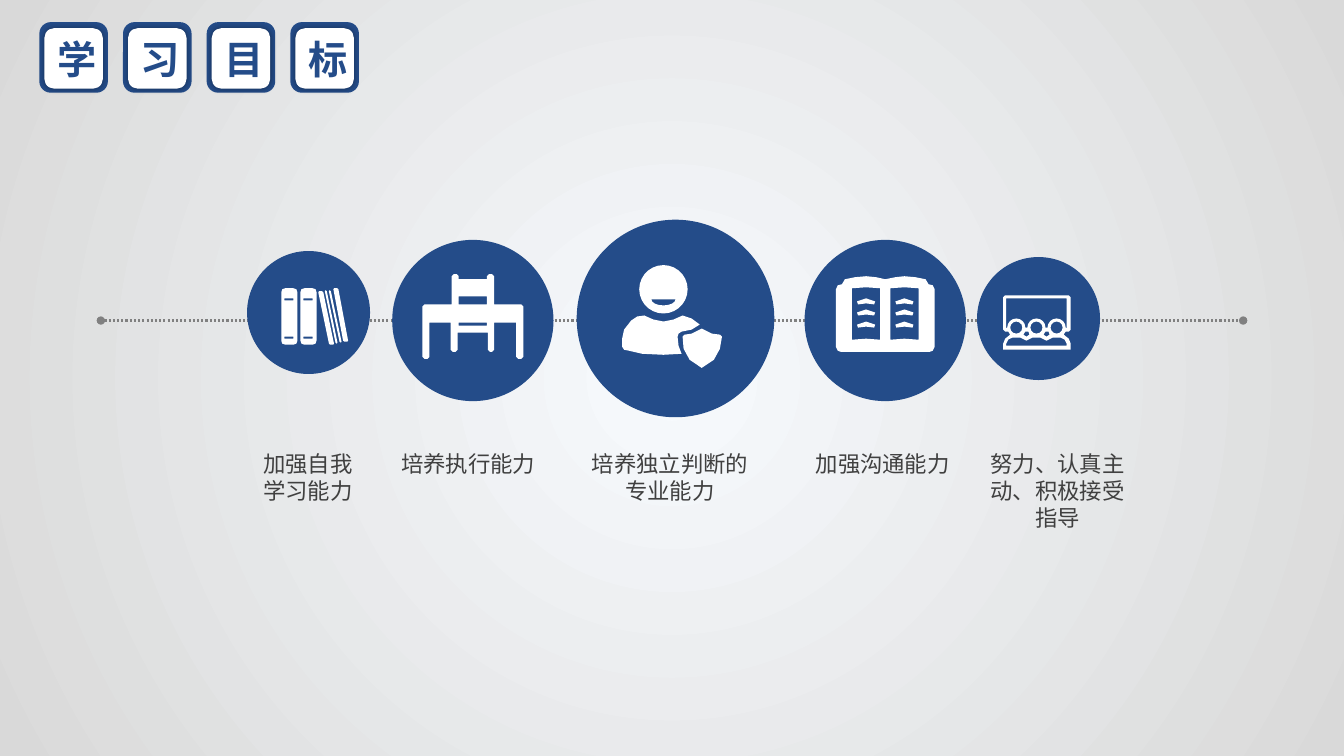
from math import cos, hypot, radians, sin

from lxml.etree import SubElement
from pptx import Presentation
from pptx.dml.color import RGBColor
from pptx.enum.dml import MSO_LINE
from pptx.enum.shapes import MSO_CONNECTOR, MSO_SHAPE
from pptx.enum.text import MSO_ANCHOR, MSO_AUTO_SIZE, PP_ALIGN
from pptx.oxml.ns import qn
from pptx.util import Pt

PX = 9144  # EMU, 100 px to the inch
FONT = "Arial"
COLORS = {
    "navy": "244C89",
    "white": "FFFFFF",
    "text": "404040",
    "line": "808080",
    "glow": "F7FAFD",
    "edge": "D9D9D9",
    "shadow": "000000",
}
TILE_LEFT, TILE_STEP = 39, 83


def color(name):
    return RGBColor.from_string(COLORS[name])


def box(left, top, width, height):
    return [(left, top), (left + width, top),
            (left + width, top + height), (left, top + height)]


def arc(center_x, center_y, radius_x, radius_y, start, end, steps):
    angles = [radians(start + (end - start) * i / steps) for i in range(steps + 1)]
    return [(center_x + radius_x * cos(a), center_y + radius_y * sin(a)) for a in angles]


def circle_outline(center_x, center_y, radius, steps):
    return arc(center_x, center_y, radius, radius, 0, 360, steps)[:-1]


def slanted(top_x, top_y, bottom_x, bottom_y, half):
    return [(top_x - half, top_y), (top_x + half, top_y),
            (bottom_x + half, bottom_y), (bottom_x - half, bottom_y)]


def move(points, dx, dy=0):
    return [(x + dx, y + dy) for x, y in points]


def soften(points, radius):
    """Round the convex corners of a clockwise outline."""
    outline = []
    for i, (x, y) in enumerate(points):
        before, after = points[i - 1], points[(i + 1) % len(points)]
        cross = (x - before[0]) * (after[1] - y) - (y - before[1]) * (after[0] - x)
        if cross <= 0:
            outline.append((x, y))
            continue
        ends = []
        for other_x, other_y in (before, after):
            length = hypot(other_x - x, other_y - y)
            share = min(radius / length, 0.5)
            ends.append((x + (other_x - x) * share, y + (other_y - y) * share))
        (x0, y0), (x1, y1) = ends
        middle = ((x0 + x1 + 2 * x) / 4, (y0 + y1 + 2 * y) / 4)
        outline += [ends[0], middle, ends[1]] if radius > 2 else ends
    return outline


def books_icon():
    contours = []
    for left in (279, 298):
        contours.append(soften(box(left, 286, 16, 56), 4))
        contours += [box(left + 3, top, 9, 2) for top in (296, 334)]
    for band in ((318, 289, 329, 342, 2.5), (323, 288, 334, 341, 1),
                 (327, 288, 338, 340, 1), (333, 286, 343, 339, 2.5)):
        contours.append(soften(slanted(*band), 1))
    return contours


def desk_icon():
    desk = [(419, 302), (448, 302), (448, 272), (455, 272), (455, 277), (483, 277),
            (483, 272), (490, 272), (490, 302), (519, 302), (519, 356), (512, 356),
            (512, 320), (490, 320), (490, 349), (484, 349), (484, 330), (454, 330),
            (454, 349), (447, 349), (447, 320), (426, 320), (426, 356), (419, 356)]
    return [soften(desk, 2), box(455, 294, 28, 8), box(455, 320, 28, 3)]


def guard_icon():
    body = [(639, 313), (648, 317), (658, 319), (668, 317), (677, 313), (686, 316),
            (694, 322), (686, 327), (676, 329), (673, 331), (672, 334), (673, 343),
            (676, 351), (658, 352), (637, 351), (624, 348), (619, 347), (617, 344),
            (617, 336), (619, 327), (626, 318), (632, 314)]
    shield = [(679, 332), (686, 331), (696, 326), (706, 331), (714, 332), (716, 334),
              (714, 346), (708, 357), (696, 365), (684, 357), (678, 346), (677, 334)]
    return [circle_outline(658, 287, 24, 28), arc(658, 297, 12, 6, 0, 180, 8),
            body, shield]


def open_book_icon():
    cover = [(831, 283), (835, 282), (838, 277), (848, 275), (859, 274), (869, 275),
             (878, 277), (888, 275), (897, 274), (908, 275), (918, 277), (921, 282),
             (925, 283), (927, 287), (927, 344), (925, 348), (922, 349),
             (834, 349), (831, 348), (829, 344), (829, 287)]
    page = [(845, 286), (859, 285), (873, 286), (873, 337), (859, 336), (845, 337)]
    text_line = [(850, 299), (859, 296), (868, 299), (867, 302), (859, 301), (851, 302)]
    contours = [cover]
    for dx in (0, 38):
        contours.append(move(page, dx))
        contours += [move(text_line, dx, dy) for dy in (0, 11, 23)]
    return contours


def classroom_icon():
    heads = (1008, 1028, 1048)
    outside = [(997, 293), (1060, 293), (1062, 295), (1062, 327), (1060, 329),
               (1057, 329), (1055, 332), (1060, 336), (1062, 341), (1062, 347),
               (995, 347), (995, 341), (997, 336), (1002, 332), (1000, 329),
               (997, 329), (995, 327), (995, 295)]
    screen = [(998, 326), (998, 296), (1058, 296), (1058, 326)]
    for head in reversed(heads):
        screen += arc(head, 325, 9, 9, 0, -180, 8)
    shoulders = [(998, 343), (998, 341), (1000, 337)]
    for head in heads:
        shoulders += [(head - 4, 335), (head + 4, 335), (head + 10, 338)]
    shoulders[-1:] = [(1056, 337), (1058, 341), (1058, 343)]
    gap = [(1017, 329), (1020, 329), (1021, 332), (1018, 334), (1015, 332)]
    return ([outside, screen, shoulders, gap, move(gap, 20)]
            + [circle_outline(head, 325, 6, 12) for head in heads])


def paint(shape, fill):
    shape.shadow.inherit = False
    shape.fill.solid()
    shape.fill.fore_color.rgb = color(fill)
    shape.line.fill.background()


def add_filled(shapes, kind, fill, *place):
    shape = shapes.add_shape(kind, *(value * PX for value in place))
    paint(shape, fill)
    return shape


def write(shape, text, size, fill, bold=False):
    paragraph = shape.text_frame.paragraphs[0]
    paragraph.text = text
    paragraph.alignment = PP_ALIGN.CENTER
    font = paragraph.runs[0].font
    font.name, font.size, font.bold = FONT, Pt(size), bold
    font.color.rgb = color(fill)


def add_soft_shadow(shape):
    effects = shape.element.spPr.find(qn("a:effectLst"))
    shadow = SubElement(effects, qn("a:outerShdw"), blurRad=str(Pt(5)), dist="0", dir="0",
                        algn="ctr", rotWithShape="0")
    tint = SubElement(shadow, qn("a:srgbClr"), val=COLORS["shadow"])
    SubElement(tint, qn("a:alpha"), val="40000")


def add_title_tile(slide, left, character):
    shapes = slide.shapes.add_group_shape().shapes
    add_filled(shapes, MSO_SHAPE.ROUNDED_RECTANGLE, "navy", left, 22, 68, 70)
    face = add_filled(shapes, MSO_SHAPE.ROUNDED_RECTANGLE, "white", left + 5, 28, 58, 60)
    add_soft_shadow(face)
    face.text_frame.vertical_anchor = MSO_ANCHOR.MIDDLE
    write(face, character, 28, "navy", bold=True)


def add_timeline(slide, left, right, y):
    line = slide.shapes.add_connector(
        MSO_CONNECTOR.STRAIGHT, left * PX, y * PX, right * PX, y * PX)
    line.line.color.rgb = color("line")
    line.line.width = Pt(1.5)
    line.line.dash_style = MSO_LINE.ROUND_DOT
    outline = line.element.spPr.find(qn("a:ln"))
    for end in ("a:headEnd", "a:tailEnd"):
        SubElement(outline, qn(end), type="oval")
    SubElement(line.element.spPr, qn("a:effectLst"))


def add_badge(slide, left, top, size, contours):
    shapes = slide.shapes.add_group_shape().shapes
    add_filled(shapes, MSO_SHAPE.OVAL, "navy", left, top, size, size)
    scaled = [[(x * PX, y * PX) for x, y in contour] for contour in contours]
    builder = shapes.build_freeform(*scaled[0][0])
    for number, contour in enumerate(scaled):
        if number:
            builder.move_to(*contour[0])
        builder.add_line_segments(contour[1:], close=True)
    paint(builder.convert_to_shape(), "white")


def add_label(slide, left, width, height, wrap, text):
    label = slide.shapes.add_textbox(left * PX, 442 * PX, width * PX, height * PX)
    label.text_frame.word_wrap = wrap
    label.text_frame.auto_size = MSO_AUTO_SIZE.SHAPE_TO_FIT_TEXT
    write(label, text, 16, "text")


def set_radial_background(slide):
    fill = slide.background.fill
    fill.gradient()
    for stop, name, position in zip(fill.gradient_stops, ("glow", "edge"), (0, 1)):
        stop.color.rgb = color(name)
        stop.position = position
    gradient = slide.element.find(".//" + qn("a:gradFill"))
    gradient.remove(gradient.find(qn("a:lin")))
    circle = SubElement(gradient, qn("a:path"), path="circle")
    SubElement(circle, qn("a:fillToRect"), l="50000", t="50000", r="50000", b="50000")


def main():
    presentation = Presentation()
    presentation.slide_width, presentation.slide_height = 1333 * PX, 750 * PX
    slide = presentation.slides.add_slide(presentation.slide_layouts[6])
    set_radial_background(slide)
    for number, character in enumerate("学习目标"):
        add_title_tile(slide, TILE_LEFT + number * TILE_STEP, character)
    add_timeline(slide, 100, 1233, 318)
    goals = [
        ((245, 249, 122), books_icon, (246, 119, 64, True), "加强自我学习能力"),
        ((389, 238, 160), desk_icon, (387, 155, 37, False), "培养执行能力"),
        ((572, 218, 196), guard_icon, (572, 185, 64, True), "培养独立判断的专业能力"),
        ((798, 238, 160), open_book_icon, (798, 155, 37, False), "加强沟通能力"),
        ((969, 255, 122), classroom_icon, (969, 160, 91, True),
         "努力、认真主动、积极接受指导"),
    ]
    for circle, icon, place, text in goals:
        add_badge(slide, *circle, icon())
        add_label(slide, *place, text)
    presentation.save("out.pptx")


if __name__ == "__main__":
    main()
